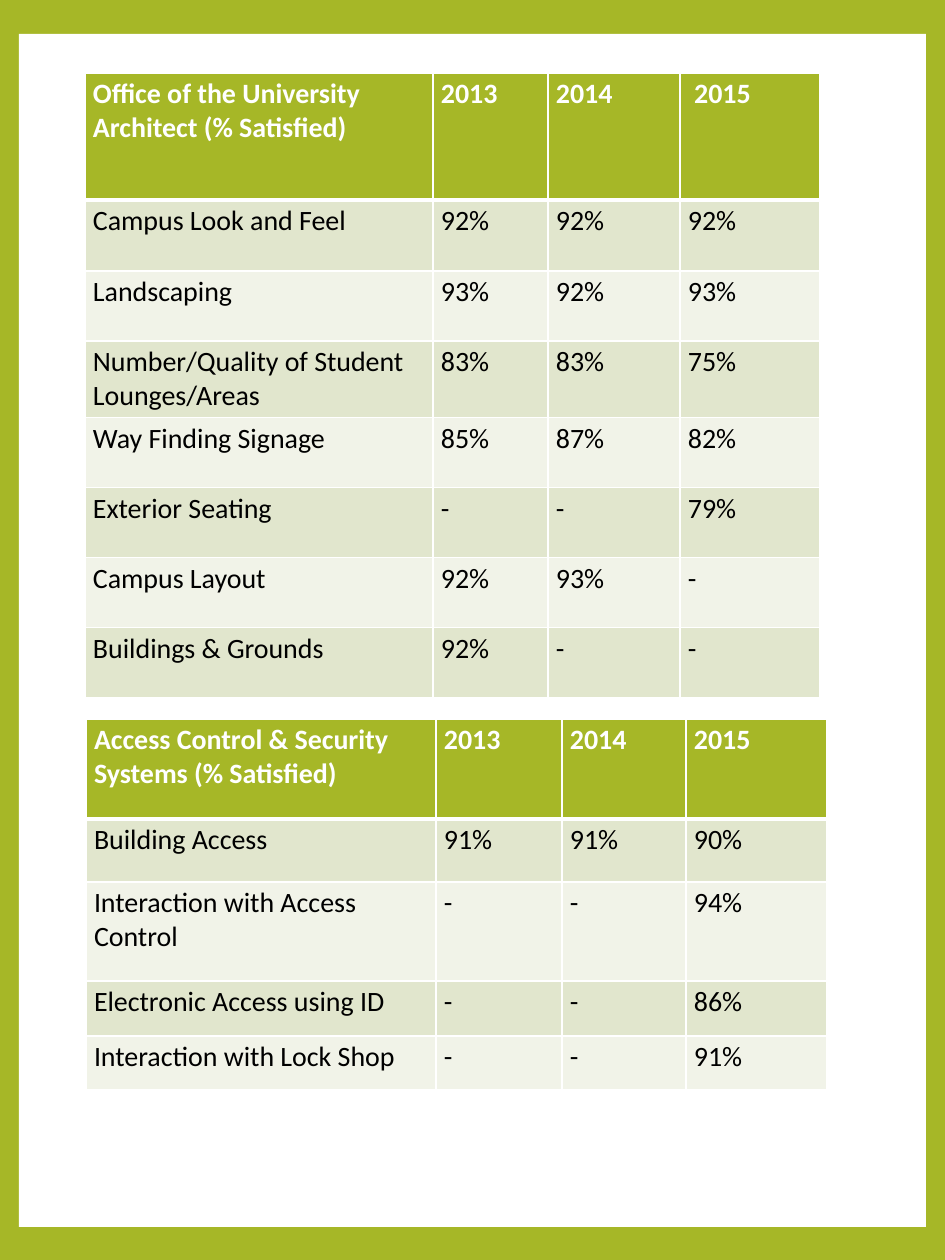
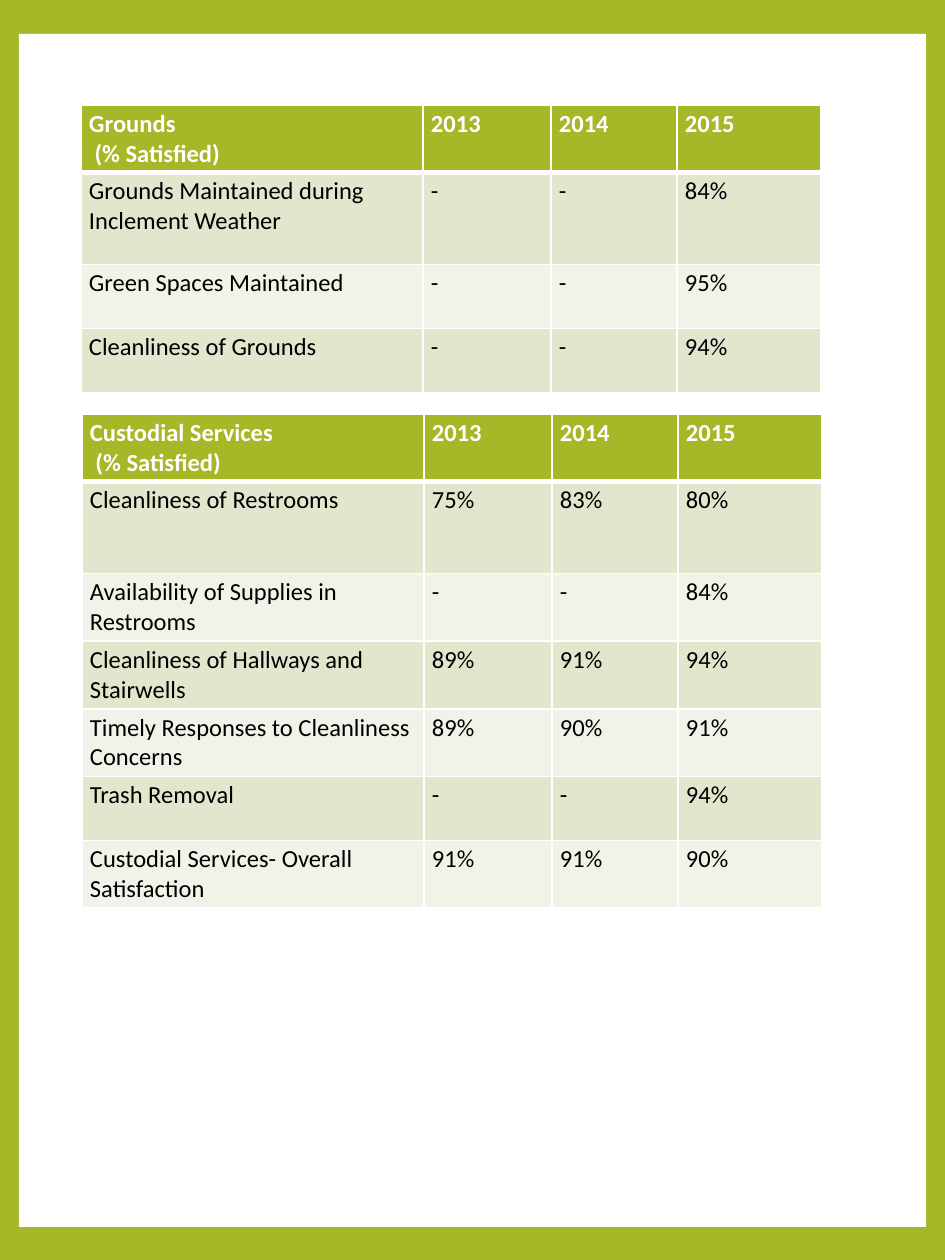
from dataclasses import dataclass

from lxml.etree import SubElement
from pptx import Presentation
from pptx.dml.color import RGBColor as RGB
from pptx.enum.shapes import MSO_SHAPE as SHAPE
from pptx.oxml.ns import qn
from pptx.util import Emu, Pt

PX = 914400 / 126  # EMU in one px
SLIDE_W, SLIDE_H = 945, 1260
PANEL = (19, 34, 907, 1193)

COLORS = {
    "green": "A6B727",
    "band_dark": "E1E6CD",
    "band_light": "F1F3E8",
    "white": "FFFFFF",
    "black": "000000",
}
CELL_MARGINS = {"margin_left": 8, "margin_right": 8, "margin_top": 4, "margin_bottom": 4}
THIN, THICK = 1, 3


@dataclass(frozen=True)
class SurveyTable:
    left: int
    top: int
    col_widths: tuple[int, ...]
    row_heights: tuple[int, ...]
    font_size: int
    rows: tuple[tuple[str, ...], ...]


ARCHITECT = SurveyTable(
    85, 73, (348, 115, 132, 140), (127, 71, 70, 75, 70, 70, 70, 70), 16,
    (
        ("Office of the University Architect (% Satisfied)", "2013", "2014", " 2015"),
        ("Campus Look and Feel", "92%", "92%", "92%"),
        ("Landscaping", "93%", "92%", "93%"),
        ("Number/Quality of Student Lounges/Areas", "83%", "83%", "75%"),
        ("Way Finding Signage", "85%", "87%", "82%"),
        ("Exterior Seating", "-", "-", "79%"),
        ("Campus Layout", "92%", "93%", "-"),
        ("Buildings & Grounds", "92%", "-", "-"),
    ),
)
ACCESS_CONTROL = SurveyTable(
    86, 719, (350, 126, 124, 141), (100, 63, 99, 55, 54), 16,
    (
        ("Access Control & Security Systems (% Satisfied)", "2013", "2014", "2015"),
        ("Building Access", "91%", "91%", "90%"),
        ("Interaction with Access Control", "-", "-", "94%"),
        ("Electronic Access using ID", "-", "-", "86%"),
        ("Interaction with Lock Shop", "-", "-", "91%"),
    ),
)
GROUNDS = SurveyTable(
    81, 105, (342, 128, 126, 144), (67, 92, 64, 64), 14,
    (
        ("Grounds\n (% Satisfied)", "2013", "2014", "2015"),
        ("Grounds Maintained during Inclement Weather", "-", "-", "84%"),
        ("Green Spaces Maintained", "-", "-", "95%"),
        ("Cleanliness of Grounds", "-", "-", "94%"),
    ),
)
CUSTODIAL = SurveyTable(
    82, 414, (342, 128, 126, 144), (67, 92, 67, 67, 67, 64, 67), 14,
    (
        ("Custodial Services\n (% Satisfied)", "2013", "2014", "2015"),
        ("Cleanliness of Restrooms", "75%", "83%", "80%"),
        ("Availability of Supplies in Restrooms", "-", "-", "84%"),
        ("Cleanliness of Hallways and Stairwells", "89%", "91%", "94%"),
        ("Timely Responses to Cleanliness Concerns", "89%", "90%", "91%"),
        ("Trash Removal", "-", "-", "94%"),
        ("Custodial Services- Overall Satisfaction", "91%", "91%", "90%"),
    ),
)
SLIDES = ((ARCHITECT, ACCESS_CONTROL), (GROUNDS, CUSTODIAL))


def px(n: int) -> Emu:
    return Emu(round(n * PX))


def color(name: str) -> RGB:
    return RGB.from_string(COLORS[name])


def fill_solid(fill, name: str) -> None:
    fill.solid()
    fill.fore_color.rgb = color(name)


def add_borders(cell, row: int) -> None:
    """Draw white cell borders, with a thick line below the header row."""
    widths = {
        "lnL": THIN,
        "lnR": THIN,
        "lnT": THICK if row == 1 else THIN,
        "lnB": THICK if row == 0 else THIN,
    }
    tc_pr = cell._tc.get_or_add_tcPr()
    for tag, width in widths.items():
        ln = SubElement(tc_pr, qn(f"a:{tag}"), w=str(Pt(width)))
        solid = SubElement(ln, qn("a:solidFill"))
        SubElement(solid, qn("a:srgbClr"), val=COLORS["white"])


def format_cell(cell, text: str, row: int, size: int) -> None:
    header = row == 0
    for name, margin in CELL_MARGINS.items():
        setattr(cell, name, px(margin))
    add_borders(cell, row)
    band = "band_dark" if row % 2 else "band_light"
    fill_solid(cell.fill, "green" if header else band)

    cell.text_frame.text = text
    font_format = {"name": "Calibri", "size": Pt(size), "bold": header}
    for p in cell.text_frame.paragraphs:
        for r in p.runs:
            for name, value in font_format.items():
                setattr(r.font, name, value)
            r.font.color.rgb = color("white" if header else "black")


def add_survey_table(s, survey: SurveyTable) -> None:
    frame = s.shapes.add_table(
        len(survey.row_heights), len(survey.col_widths),
        px(survey.left), px(survey.top),
        px(sum(survey.col_widths)), px(sum(survey.row_heights)),
    )
    table = frame.table
    for col, width in zip(table.columns, survey.col_widths):
        col.width = px(width)
    for row, height in zip(table.rows, survey.row_heights):
        row.height = px(height)
    for i, texts in enumerate(survey.rows):
        for j, text in enumerate(texts):
            format_cell(table.cell(i, j), text, i, survey.font_size)


def add_framed_slide(prs):
    """Add a blank slide with a green border around a white panel."""
    s = prs.slides.add_slide(prs.slide_layouts[6])
    fill_solid(s.background.fill, "green")
    sp = s.shapes.add_shape(SHAPE.RECTANGLE, *map(px, PANEL))
    sp.shadow.inherit = False
    fill_solid(sp.fill, "white")
    sp.line.fill.background()
    return s


def main() -> None:
    prs = Presentation()
    prs.slide_width, prs.slide_height = px(SLIDE_W), px(SLIDE_H)
    for surveys in SLIDES:
        s = add_framed_slide(prs)
        for survey in surveys:
            add_survey_table(s, survey)
    prs.save("out.pptx")


if __name__ == "__main__":
    main()
